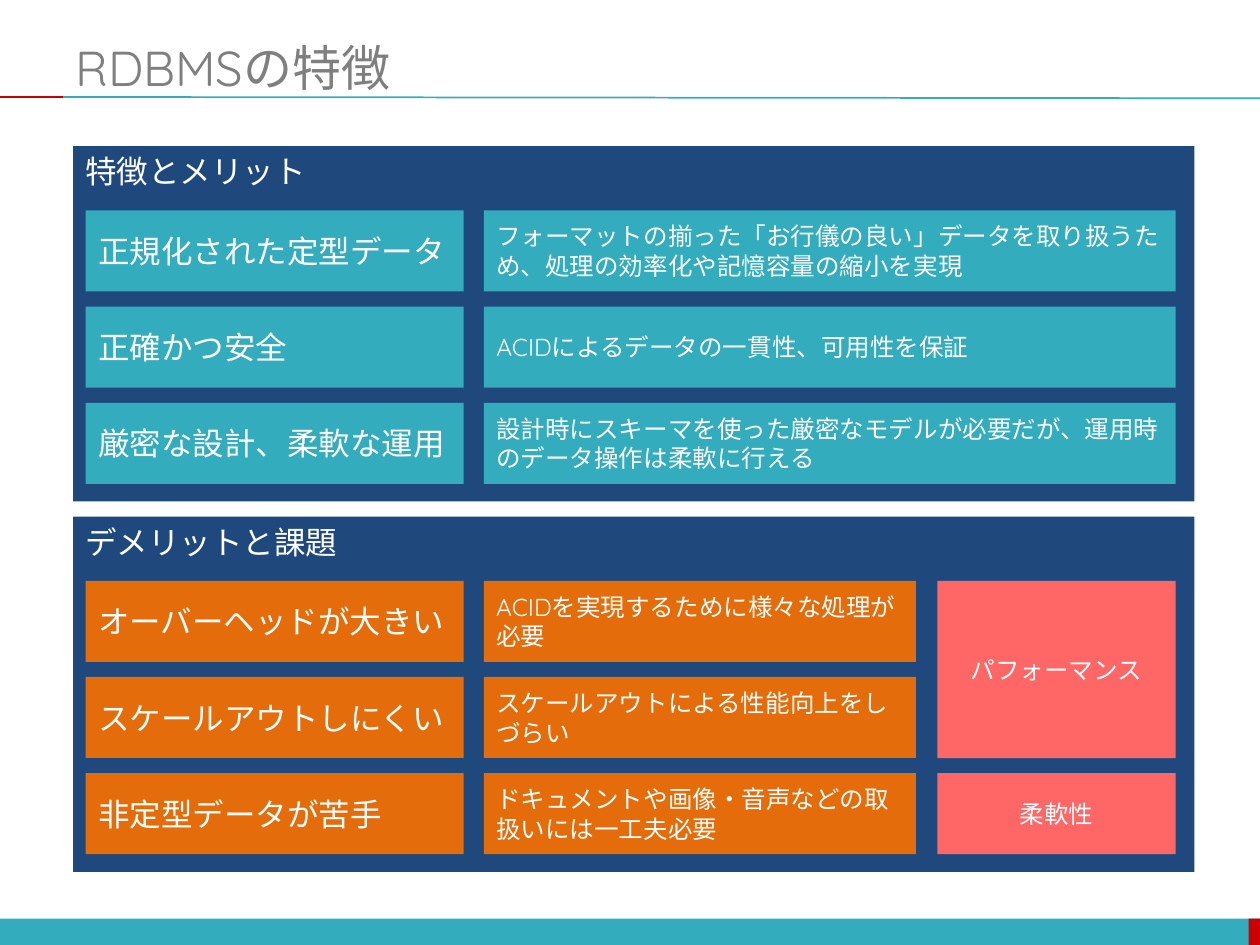
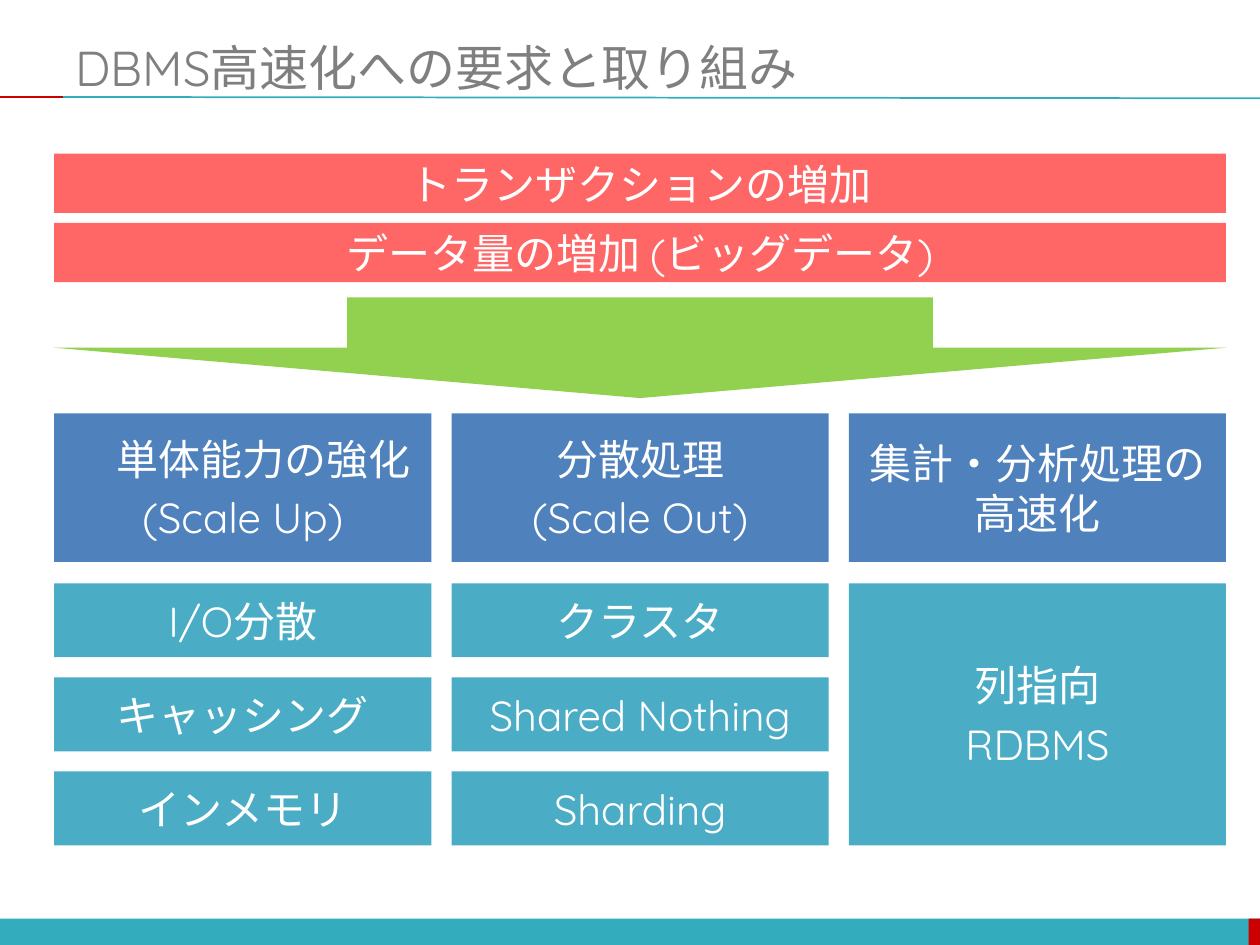
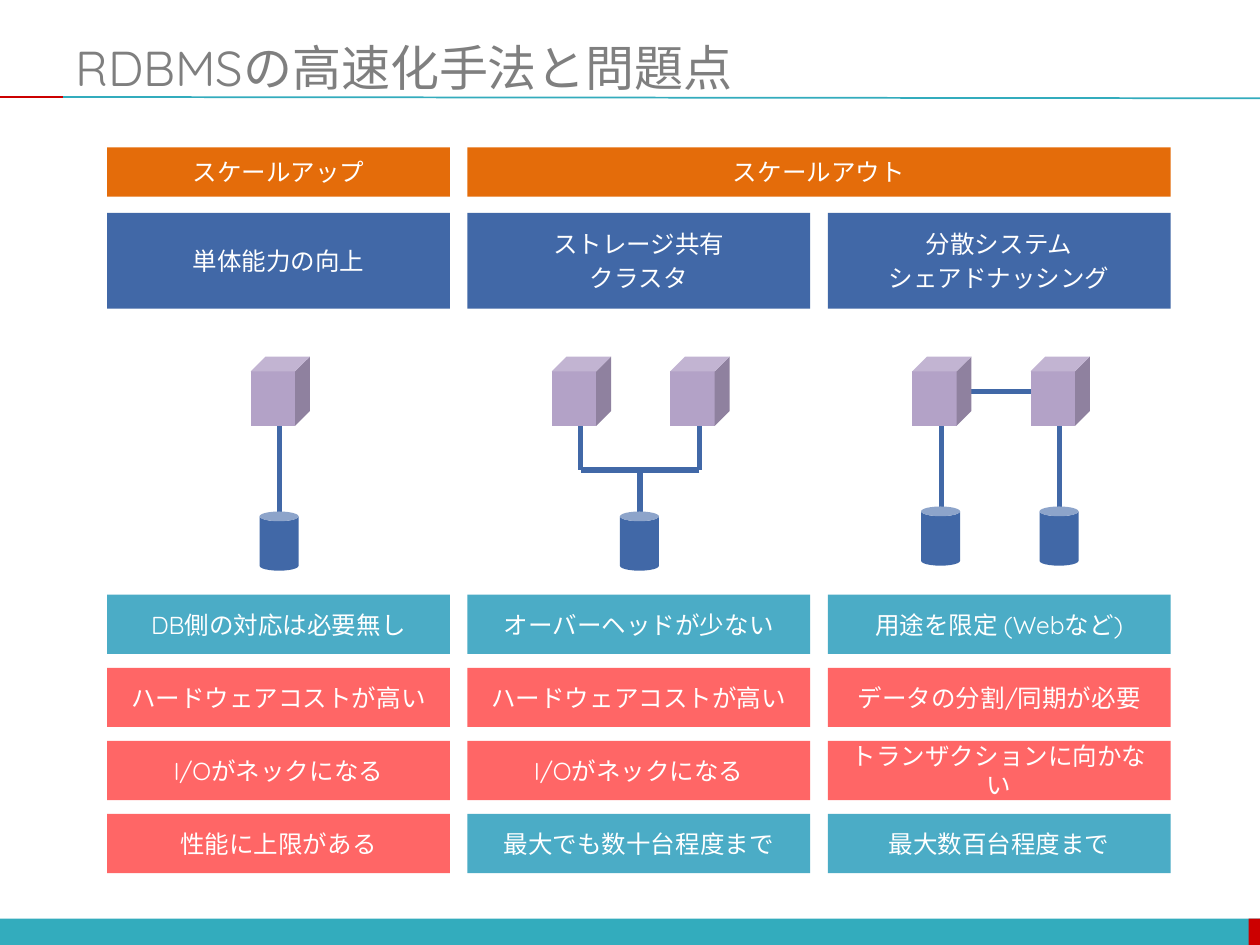
from dataclasses import dataclass

from lxml import etree
from pptx import Presentation
from pptx.dml.color import RGBColor
from pptx.enum.shapes import MSO_CONNECTOR, MSO_SHAPE
from pptx.enum.text import MSO_ANCHOR, MSO_AUTO_SIZE, PP_ALIGN
from pptx.oxml.ns import qn
from pptx.shapes.shapetree import SlideShapes
from pptx.util import Inches, Pt

RECT = MSO_SHAPE.RECTANGLE
ROUNDED = MSO_SHAPE.ROUNDED_RECTANGLE
CUBE = MSO_SHAPE.CUBE
CAN = MSO_SHAPE.CAN
DOWN_ARROW = MSO_SHAPE.DOWN_ARROW
STRAIGHT = MSO_CONNECTOR.STRAIGHT
TOP, MIDDLE = MSO_ANCHOR.TOP, MSO_ANCHOR.MIDDLE
LEFT, CENTER = PP_ALIGN.LEFT, PP_ALIGN.CENTER


@dataclass(frozen=True)
class Theme:
    font: str = "Quicksand"
    white: str = "FFFFFF"
    gray: str = "7F7F7F"
    teal: str = "33ACBD"
    red: str = "CC0000"
    navy: str = "1F497D"
    orange: str = "E46C0A"
    coral: str = "FF6666"
    blue: str = "4F81BD"
    aqua: str = "4BACC6"
    green: str = "92D050"
    indigo: str = "4168A7"
    lilac: str = "B3A2C7"
    title_size: int = 28
    topic_size: int = 24
    label_size: int = 18
    detail_size: int = 14
    paragraph_gap: float = 0.2


THEME = Theme()


@dataclass(frozen=True)
class Box:
    x: float
    y: float
    w: float
    h: float

    def inner(self, dx, dy, w, h):
        return Box(self.x + dx, self.y + dy, w, h)

    def columns(self, count, gap):
        w = (self.w - gap * (count - 1)) / count
        return [Box(self.x + i * (w + gap), self.y, w, self.h) for i in range(count)]

    def rows(self, count, gap):
        h = (self.h - gap * (count - 1)) / count
        return [Box(self.x, self.y + i * (h + gap), self.w, h) for i in range(count)]

    def through(self, last):
        return Box(self.x, self.y, last.x + last.w - self.x, last.y + last.h - self.y)

    def inches(self):
        return [Inches(value) for value in (self.x, self.y, self.w, self.h)]


def style_paragraph(paragraph, size, color, align):
    paragraph.alignment = align
    paragraph.font.name = THEME.font
    paragraph.font.size = Pt(size)
    paragraph.font.color.rgb = RGBColor.from_string(color)


def add_solid(shapes, kind, box, color):
    solid = shapes.add_shape(kind, *box.inches())
    solid.shadow.inherit = False
    solid.fill.solid()
    solid.fill.fore_color.rgb = RGBColor.from_string(color)
    solid.line.fill.background()
    return solid


def add_card(shapes, box, color, text, size, align=CENTER, anchor=MIDDLE, kind=RECT):
    card = add_solid(shapes, kind, box, color)
    if kind == ROUNDED:
        card.adjustments[0] = 0
    frame = card.text_frame
    frame.word_wrap = True
    frame.vertical_anchor = anchor
    frame.text = text
    for index, paragraph in enumerate(frame.paragraphs):
        if index:
            paragraph.space_before = Pt(size * THEME.paragraph_gap)
        style_paragraph(paragraph, size, THEME.white, align)


def add_line(shapes, start, end, color, width):
    points = [Inches(value) for value in (*start, *end)]
    line = shapes.add_connector(STRAIGHT, *points)
    line.line.color.rgb = RGBColor.from_string(color)
    line.line.width = Pt(width)
    etree.SubElement(line.element.spPr, qn("a:effectLst"))


def decorate_layout(layout):
    title = layout.placeholders[0]
    title.left, title.top, title.width, title.height = Box(0.5, 0.3, 9.5, 0.46).inches()
    shapes = SlideShapes(layout.shapes.element, layout)
    add_solid(shapes, RECT, Box(0, 7.29, 10, 0.21), THEME.teal)
    add_solid(shapes, RECT, Box(9.91, 7.29, 0.09, 0.21), THEME.red)
    add_line(shapes, (0.5, 0.77), (10, 0.78), THEME.teal, 1)
    add_line(shapes, (0, 0.77), (0.5, 0.77), THEME.red, 1)


def add_titled_slide(deck, layout, title):
    slide = deck.slides.add_slide(layout)
    frame = slide.shapes.title.text_frame
    frame.text = title
    frame.auto_size = MSO_AUTO_SIZE.NONE
    frame.vertical_anchor = MIDDLE
    style_paragraph(frame.paragraphs[0], THEME.title_size, THEME.gray, LEFT)
    return slide.shapes


def add_feature_panel(shapes, box, heading, features, color, detail_width):
    add_card(shapes, box, THEME.navy, heading, THEME.label_size, LEFT, TOP)
    rows = box.inner(0.1, 0.51, 8.75, 2.17).rows(3, 0.12)
    for row, (label, detail) in zip(rows, features):
        add_card(shapes, row.inner(0, 0, 3, row.h), color, label, THEME.label_size, LEFT)
        add_card(shapes, row.inner(3.16, 0, detail_width, row.h), color, detail,
                 THEME.detail_size, LEFT)
    return rows


def build_features(deck, layout):
    shapes = add_titled_slide(deck, layout, "RDBMSの特徴")
    merits = [
        ("正規化された定型データ",
         "フォーマットの揃った「お行儀の良い」データを取り扱うため、処理の効率化や記憶容量の縮小を実現"),
        ("正確かつ安全", "ACIDによるデータの一貫性、可用性を保証"),
        ("厳密な設計、柔軟な運用",
         "設計時にスキーマを使った厳密なモデルが必要だが、運用時のデータ操作は柔軟に行える"),
    ]
    demerits = [
        ("オーバーヘッドが大きい", "ACIDを実現するために様々な処理が必要"),
        ("スケールアウトしにくい", "スケールアウトによる性能向上をしづらい"),
        ("非定型データが苦手", "ドキュメントや画像・音声などの取扱いには一工夫必要"),
    ]
    add_feature_panel(shapes, Box(0.58, 1.16, 8.9, 2.82), "特徴とメリット", merits,
                      THEME.teal, 5.49)
    rows = add_feature_panel(shapes, Box(0.58, 4.1, 8.9, 2.82), "デメリットと課題", demerits,
                             THEME.orange, 3.43)
    impacts = [row.inner(6.76, 0, 1.89, row.h) for row in rows]
    add_card(shapes, impacts[0].through(impacts[1]), THEME.coral, "パフォーマンス",
             THEME.detail_size)
    add_card(shapes, impacts[2], THEME.coral, "柔軟性", THEME.detail_size)


def add_stack(shapes, box, gap, color, topics):
    for row, topic in zip(box.rows(len(topics), gap), topics):
        add_card(shapes, row, color, topic, THEME.topic_size)


def build_demands(deck, layout):
    shapes = add_titled_slide(deck, layout, "DBMS高速化への要求と取り組み")
    demands = ["トランザクションの増加", "データ量の増加 (ビッグデータ)"]
    approaches = [
        ("　単体能力の強化\n(Scale Up)", ["I/O分散", "キャッシング", "インメモリ"]),
        ("分散処理\n(Scale Out)", ["クラスタ", "Shared Nothing", "Sharding"]),
        ("集計・分析処理の高速化", ["列指向\nRDBMS"]),
    ]
    area = Box(0.43, 1.22, 9.3, 5.49)
    add_stack(shapes, area.inner(0, 0, area.w, 1.02), 0.08, THEME.coral, demands)
    add_solid(shapes, DOWN_ARROW, area.inner(0, 1.14, area.w, 0.8), THEME.green)
    for column, (approach, methods) in zip(area.columns(3, 0.16), approaches):
        add_card(shapes, column.inner(0, 2.06, column.w, 1.18), THEME.blue, approach,
                 THEME.topic_size)
        add_stack(shapes, column.inner(0, 3.41, column.w, 2.08), 0.16, THEME.aqua, methods)


def add_topology(shapes, box, server_offsets, disk_offsets, wires, disk_top):
    group = shapes.add_group_shape().shapes
    center = box.x + box.w / 2
    for x1, y1, x2, y2 in wires:
        add_line(group, (center + x1, box.y + y1), (center + x2, box.y + y2),
                 THEME.indigo, 3)
    for offset in disk_offsets:
        add_solid(group, CAN, Box(center + offset - 0.16, box.y + disk_top, 0.31, 0.47),
                  THEME.indigo)
    for offset in server_offsets:
        add_solid(group, CUBE, Box(center + offset - 0.23, box.y, 0.47, 0.55), THEME.lilac)


def add_topologies(shapes, area):
    pair = (-0.47, 0.47)
    single, shared, separate = area.columns(3, 0.14)
    add_topology(shapes, single, [0], [0], [(0, 0.32, 0, 1.47)], 1.23)
    shared_wires = [(x, 0.32, x, 0.9) for x in pair]
    shared_wires += [(0.47, 0.9, -0.47, 0.9), (0, 0.9, 0, 1.47)]
    add_topology(shapes, shared, pair, [0], shared_wires, 1.23)
    separate_wires = [(x, 0.28, x, 1.42) for x in pair] + [(0.47, 0.28, -0.47, 0.28)]
    add_topology(shapes, separate, pair, pair, separate_wires, 1.19)


def build_methods(deck, layout):
    shapes = add_titled_slide(deck, layout, "RDBMSの高速化手法と問題点")
    good, bad = THEME.aqua, THEME.coral
    methods = [
        ("単体能力の向上",
         [("DB側の対応は必要無し", good), ("ハードウェアコストが高い", bad),
          ("I/Oがネックになる", bad), ("性能に上限がある", bad)]),
        ("ストレージ共有\nクラスタ",
         [("オーバーヘッドが少ない", good), ("ハードウェアコストが高い", bad),
          ("I/Oがネックになる", bad), ("最大でも数十台程度まで", good)]),
        ("分散システム\nシェアドナッシング",
         [("用途を限定 (Webなど)", good), ("データの分割/同期が必要", bad),
          ("トランザクションに向かない", bad), ("最大数百台程度まで", good)]),
    ]

    def add_method_card(box, color, text):
        add_card(shapes, box, color, text, THEME.detail_size, kind=ROUNDED)

    area = Box(0.85, 1.17, 8.44, 5.76)
    scale_up, *scale_out = area.inner(0, 0, area.w, 0.39).columns(3, 0.14)
    add_method_card(scale_up, THEME.orange, "スケールアップ")
    add_method_card(scale_out[0].through(scale_out[1]), THEME.orange, "スケールアウト")
    for column, (method, traits) in zip(area.columns(3, 0.14), methods):
        add_method_card(column.inner(0, 0.52, column.w, 0.76), THEME.indigo, method)
        trait_rows = column.inner(0, 3.55, column.w, 2.21).rows(4, 0.11)
        for row, (trait, color) in zip(trait_rows, traits):
            add_method_card(row, color, trait)
    add_topologies(shapes, area.inner(0.01, 1.66, area.w, 1.7))


def main():
    deck = Presentation()
    deck.slide_width, deck.slide_height = Inches(10), Inches(7.5)
    layout = deck.slide_layouts[5]
    decorate_layout(layout)
    for build in (build_features, build_demands, build_methods):
        build(deck, layout)
    deck.save("out.pptx")


if __name__ == "__main__":
    main()
